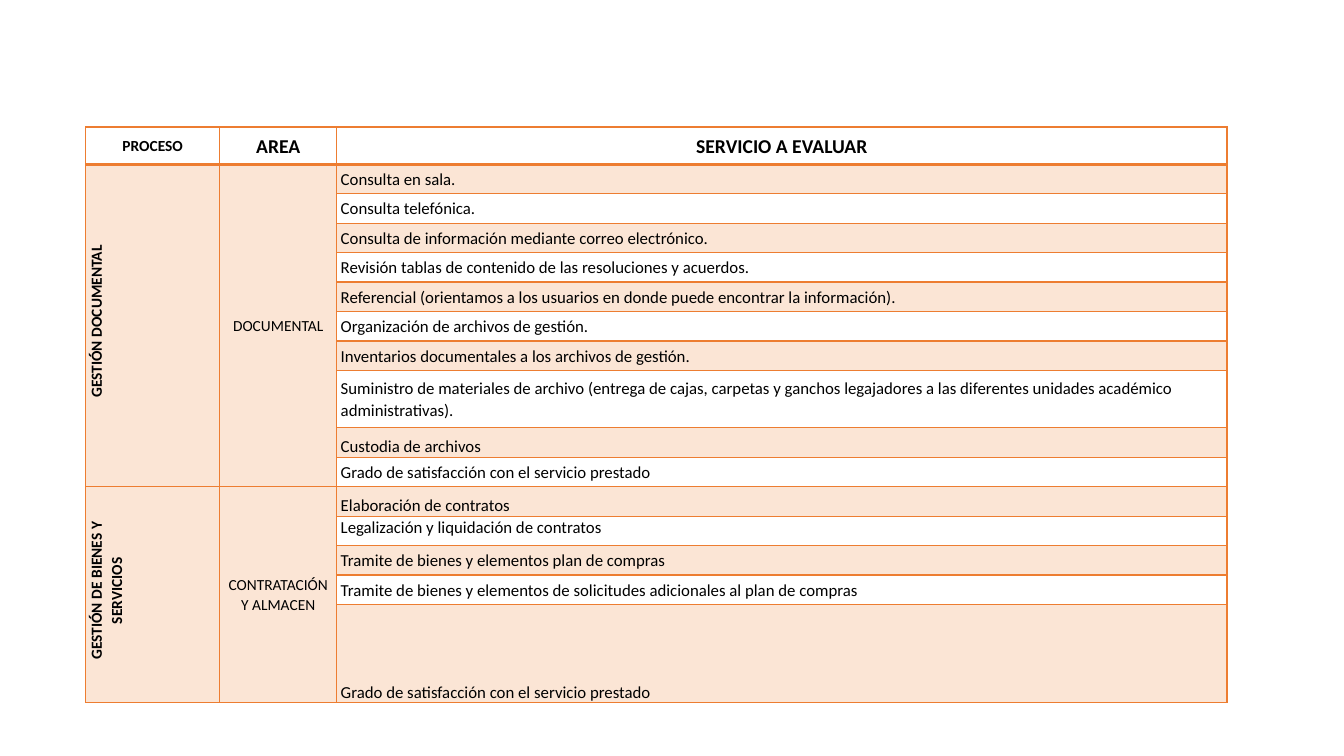
"""Builds a slide with the table of services to evaluate by process and area."""
from lxml.etree import SubElement
from pptx import Presentation
from pptx.dml.color import RGBColor
from pptx.enum.text import MSO_ANCHOR as ANCHOR, PP_ALIGN as ALIGN
from pptx.oxml.ns import qn
from pptx.util import Inches, Pt

ORANGE = RGBColor(0xED, 0x7D, 0x31)
BLACK = RGBColor(0, 0, 0)
FONT = "Calibri"
THIN, THICK = 1, 2.25
TABLE_HEIGHT, HEADER_HEIGHT, TALL_HEIGHT = 5.03, 0.37, 0.57
TALL_ROW = 8
COLUMN_WIDTHS = [1.33, 1.16, 8.83]

HEADERS = [("PROCESO", 11), ("AREA", 14), ("SERVICIO A EVALUAR", 14)]
GROUPS = [
    ("GESTIÓN DOCUMENTAL", "DOCUMENTAL", [
        ("Consulta en sala.", ANCHOR.MIDDLE),
        ("Consulta telefónica.", ANCHOR.MIDDLE),
        ("Consulta de información mediante correo electrónico.", ANCHOR.MIDDLE),
        ("Revisión tablas de contenido de las resoluciones y acuerdos.", ANCHOR.MIDDLE),
        ("Referencial (orientamos a los usuarios en donde puede encontrar la "
         "información).", ANCHOR.MIDDLE),
        ("Organización de archivos de gestión.", ANCHOR.MIDDLE),
        ("Inventarios documentales a los archivos de gestión.", ANCHOR.MIDDLE),
        ("Suministro de materiales de archivo (entrega de cajas, carpetas y ganchos "
         "legajadores a las diferentes unidades académico administrativas).",
         ANCHOR.MIDDLE),
        ("Custodia de archivos", ANCHOR.BOTTOM),
        ("Grado de satisfacción con el servicio prestado", ANCHOR.MIDDLE),
    ]),
    ("GESTIÓN DE BIENES Y SERVICIOS", "CONTRATACIÓN Y ALMACEN", [
        ("Elaboración de contratos", ANCHOR.BOTTOM),
        ("Legalización y liquidación de contratos", ANCHOR.TOP),
        ("Tramite de bienes y elementos plan de compras", ANCHOR.MIDDLE),
        ("Tramite de bienes y elementos de solicitudes adicionales al plan de compras",
         ANCHOR.MIDDLE),
        ("Grado de satisfacción con el servicio prestado", ANCHOR.BOTTOM),
    ]),
]


def add_border(cell, side, width):
    """Draw one orange border of a cell."""
    ln = SubElement(cell._tc.get_or_add_tcPr(), qn(f"a:ln{side}"), w=str(Pt(width)))
    fill = SubElement(ln, qn("a:solidFill"))
    SubElement(fill, qn("a:srgbClr"), val=str(ORANGE))


def style_cell(cell, row, shaded):
    """Set the margins, borders and fill of a cell."""
    cell.margin_left = cell.margin_right = Inches(0.04)
    cell.margin_top = cell.margin_bottom = 0
    for side in "LRTB":
        under_header = (row, side) in ((0, "B"), (1, "T"))
        add_border(cell, side, THICK if under_header else THIN)
    if shaded:
        cell.fill.solid()
        cell.fill.fore_color.rgb = ORANGE
        color = cell._tc.tcPr.find(qn("a:solidFill")).find(qn("a:srgbClr"))
        SubElement(color, qn("a:alpha"), val="20000")
    else:
        cell.fill.background()


def write_cell(cell, text, size, bold=False, align=ALIGN.LEFT, anchor=ANCHOR.MIDDLE):
    """Write one run of text in a cell."""
    cell.vertical_anchor = anchor
    p = cell.text_frame.paragraphs[0]
    p.alignment = align
    p.line_spacing = 1.07
    r = p.add_run()
    r.text = text
    r.font.name = FONT
    r.font.size = Pt(size)
    r.font.bold = bold
    r.font.color.rgb = BLACK


def rotate_cell(cell):
    """Turn the text of a cell to read upwards, with a small indent."""
    cell._tc.get_or_add_tcPr().set("vert", "vert270")
    pPr = cell.text_frame.paragraphs[0]._p.get_or_add_pPr()
    pPr.set("marL", str(Inches(0.08)))
    pPr.set("indent", "0")


def add_group(table, top, process, area, services):
    """Fill the rows of one process and return the row after it."""
    bottom = top + len(services) - 1
    for col, text in enumerate((process, area)):
        cell = table.cell(top, col)
        cell.merge(table.cell(bottom, col))
        write_cell(cell, text, 11, bold=col == 0, align=ALIGN.CENTER)
    rotate_cell(table.cell(top, 0))
    for row, (text, anchor) in enumerate(services, top):
        write_cell(table.cell(row, 2), text, 12, anchor=anchor)
    return bottom + 1


def add_service_table(s):
    """Add the table with its header and process groups."""
    rows = 1 + sum(len(services) for _, _, services in GROUPS)
    frame = s.shapes.add_table(rows, len(COLUMN_WIDTHS), Inches(0.85), Inches(1.26),
                               Inches(sum(COLUMN_WIDTHS)), Inches(TABLE_HEIGHT))
    table = frame.table
    table.first_row = table.horz_banding = False
    for column, width in zip(table.columns, COLUMN_WIDTHS):
        column.width = Inches(width)
    row_height = (TABLE_HEIGHT - HEADER_HEIGHT - TALL_HEIGHT) / (rows - 2)
    special = {0: HEADER_HEIGHT, TALL_ROW: TALL_HEIGHT}
    for row in range(rows):
        table.rows[row].height = Inches(special.get(row, row_height))
        for col in range(len(COLUMN_WIDTHS)):
            shaded = row > 0 and (col < 2 or row % 2 == 1)
            style_cell(table.cell(row, col), row, shaded)
    for col, (text, size) in enumerate(HEADERS):
        write_cell(table.cell(0, col), text, size, bold=True, align=ALIGN.CENTER)
    top = 1
    for process, area, services in GROUPS:
        top = add_group(table, top, process, area, services)


def main():
    """Build and save the slide."""
    prs = Presentation()
    prs.slide_width, prs.slide_height = Inches(13.33), Inches(7.5)
    s = prs.slides.add_slide(prs.slide_layouts[6])
    add_service_table(s)
    prs.save("out.pptx")


if __name__ == "__main__":
    main()
